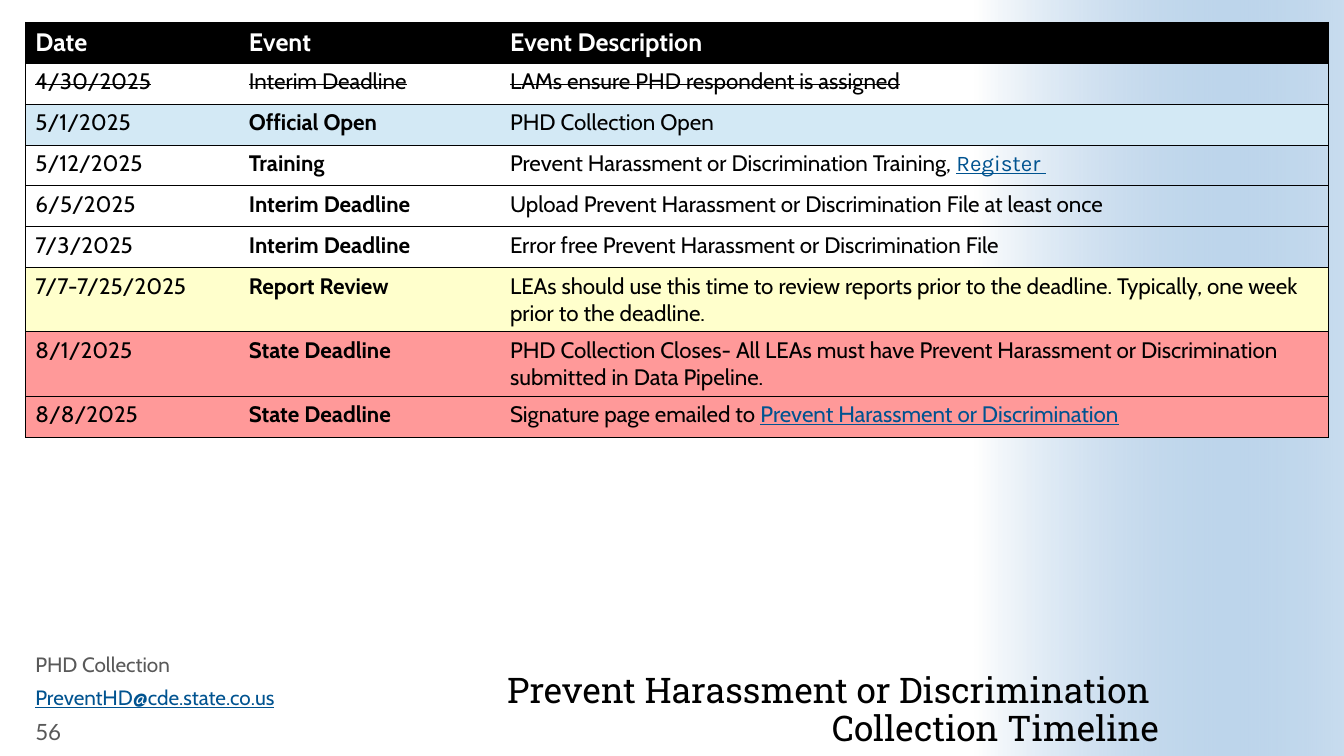
from dataclasses import dataclass

from lxml.etree import SubElement
from pptx import Presentation
from pptx.dml.color import RGBColor
from pptx.enum.shapes import MSO_SHAPE
from pptx.enum.text import MSO_ANCHOR, PP_ALIGN
from pptx.oxml.ns import qn
from pptx.util import Cm, Pt


@dataclass(frozen=True)
class Theme:
    black: str = "000000"
    white: str = "FFFFFF"
    gray: str = "595959"
    link: str = "005390"
    glow: str = "488BC9"
    open: str = "D3E9F5"
    review: str = "FFFFCC"
    close: str = "FF9999"
    font: str = "Cabin"
    serif: str = "Roboto Slab"
    sans: str = "Karla"
    digit: str = "Lato"
    title: float = 25.2
    head: float = 18
    body: float = 16
    small: float = 14.8
    rule: float = 0.5


LOOK = Theme()
COLS = (5.38, 6.58, 20.88)
SINGLE, DOUBLE = 1.03, 1.62
HEADS = ("Date", "Event", "Event Description")
ROWS = (
    ("4/30/2025", "Interim Deadline", "LAMs ensure PHD respondent is assigned", "", None, SINGLE),
    ("5/1/2025", "Official Open", "PHD Collection Open", "", LOOK.open, SINGLE),
    ("5/12/2025", "Training", "Prevent Harassment or Discrimination Training, ", "Register ", None, SINGLE),
    ("6/5/2025", "Interim Deadline",
     "Upload Prevent Harassment or Discrimination File at least once", "", None, SINGLE),
    ("7/3/2025", "Interim Deadline",
     "Error free Prevent Harassment or Discrimination File", "", None, SINGLE),
    ("7/7-7/25/2025", "Report Review",
     "LEAs should use this time to review reports prior to the deadline. "
     "Typically, one week prior to the deadline.", "", LOOK.review, DOUBLE),
    ("8/1/2025", "State Deadline",
     "PHD Collection Closes- All LEAs must have Prevent Harassment or Discrimination "
     "submitted in Data Pipeline.", "", LOOK.close, DOUBLE),
    ("8/8/2025", "State Deadline", "Signature page emailed to ",
     "Prevent Harassment or Discrimination", LOOK.close, SINGLE),
)


def write(para, text, size=LOOK.body, font=LOOK.font, color=LOOK.black,
          bold=False, under=False, strike=False):
    run = para.add_run()
    run.text = text
    face = run.font
    face.size, face.name = Pt(size), font
    face.bold, face.underline = bold, under
    face.color.rgb = RGBColor.from_string(color)
    if strike:
        run._r.get_or_add_rPr().set("strike", "sngStrike")


def add_glow(slide):
    band = slide.shapes.add_shape(MSO_SHAPE.RECTANGLE, Cm(24.57), 0, Cm(9.3), Cm(19.05))
    band.shadow.inherit = False
    band.line.fill.background()
    band.fill.gradient()
    band.fill.gradient_angle = 0
    start, end = band.fill.gradient_stops
    start.position, end.position = 0, 1
    start.color.rgb = RGBColor.from_string(LOOK.white)
    end.color.rgb = RGBColor.from_string(LOOK.glow)
    for tint in band._element.spPr.findall(".//" + qn("a:srgbClr")):
        if tint.get("val") == LOOK.glow:
            SubElement(tint, qn("a:alpha"), val="30000")
    slide.shapes.title._element.addprevious(band._element)


def add_title(slide):
    title = slide.shapes.title
    title.left, title.top, title.width, title.height = Cm(10.82), Cm(16.38), Cm(18.39), Cm(2.49)
    frame = title.text_frame
    frame.word_wrap = True
    frame.vertical_anchor = MSO_ANCHOR.BOTTOM
    frame.margin_left = frame.margin_right = frame.margin_top = frame.margin_bottom = 0
    para = frame.paragraphs[0]
    para.alignment = PP_ALIGN.RIGHT
    para.line_spacing = 0.9
    write(para, "Prevent Harassment or Discrimination ", size=LOOK.title, font=LOOK.serif)
    para.add_line_break()
    write(para, "Collection Timeline", size=LOOK.title, font=LOOK.serif)


def add_label(slide, text, top, width, space=None, anchor=MSO_ANCHOR.TOP, **style):
    box = slide.shapes.add_textbox(Cm(0.64), Cm(top), Cm(width), Cm(0.79))
    frame = box.text_frame
    frame.word_wrap = True
    frame.vertical_anchor = anchor
    para = frame.paragraphs[0]
    para.line_spacing = space
    write(para, text, **style)


def set_edges(cell, sides):
    props = cell._tc.get_or_add_tcPr()
    for side in "LRTB":
        line = SubElement(props, qn("a:ln" + side), w=str(Pt(LOOK.rule)))
        if side in sides:
            fill = SubElement(line, qn("a:solidFill"))
            SubElement(fill, qn("a:srgbClr"), val=LOOK.black)
        else:
            SubElement(line, qn("a:noFill"))


def set_fill(cell, color):
    if color:
        cell.fill.solid()
        cell.fill.fore_color.rgb = RGBColor.from_string(color)
    else:
        cell.fill.background()


def add_dates(slide):
    count = len(ROWS) + 1
    high = SINGLE + sum(row[-1] for row in ROWS)
    table = slide.shapes.add_table(count, len(COLS), Cm(0.64), Cm(0.56),
                                   Cm(sum(COLS)), Cm(high)).table
    table.horz_banding = False
    for col, width in zip(table.columns, COLS):
        col.width = Cm(width)
    table.rows[0].height = Cm(SINGLE)
    sides = ("LTB", "TB", "RTB")
    for c, head in enumerate(HEADS):
        cell = table.cell(0, c)
        set_edges(cell, sides[c])
        set_fill(cell, LOOK.black)
        write(cell.text_frame.paragraphs[0], head, size=LOOK.head, color=LOOK.white, bold=True)
    for r, (date, event, detail, link, color, height) in enumerate(ROWS, 1):
        table.rows[r].height = Cm(height)
        past = r == 1
        for c, text in enumerate((date, event, detail)):
            cell = table.cell(r, c)
            set_edges(cell, sides[c])
            set_fill(cell, color)
            write(cell.text_frame.paragraphs[0], text, bold=c == 1 and not past, strike=past)
        if link:
            font = LOOK.font if color else LOOK.sans
            write(table.cell(r, 2).text_frame.paragraphs[0], link,
                  font=font, color=LOOK.link, under=True)


def main():
    deck = Presentation()
    deck.slide_width, deck.slide_height = Cm(33.87), Cm(19.05)
    slide = deck.slides.add_slide(deck.slide_layouts[5])
    add_glow(slide)
    add_title(slide)
    add_dates(slide)
    add_label(slide, "PHD Collection", 16.43, 9.88, space=0.8,
              size=LOOK.small, color=LOOK.gray)
    add_label(slide, "PreventHD@cde.state.co.us", 17.25, 9.88, space=0.8,
              size=LOOK.small, color=LOOK.link, under=True)
    add_label(slide, "56", 18.03, 2.16, anchor=MSO_ANCHOR.MIDDLE,
              font=LOOK.digit, color=LOOK.gray)
    deck.save("out.pptx")


if __name__ == "__main__":
    main()
